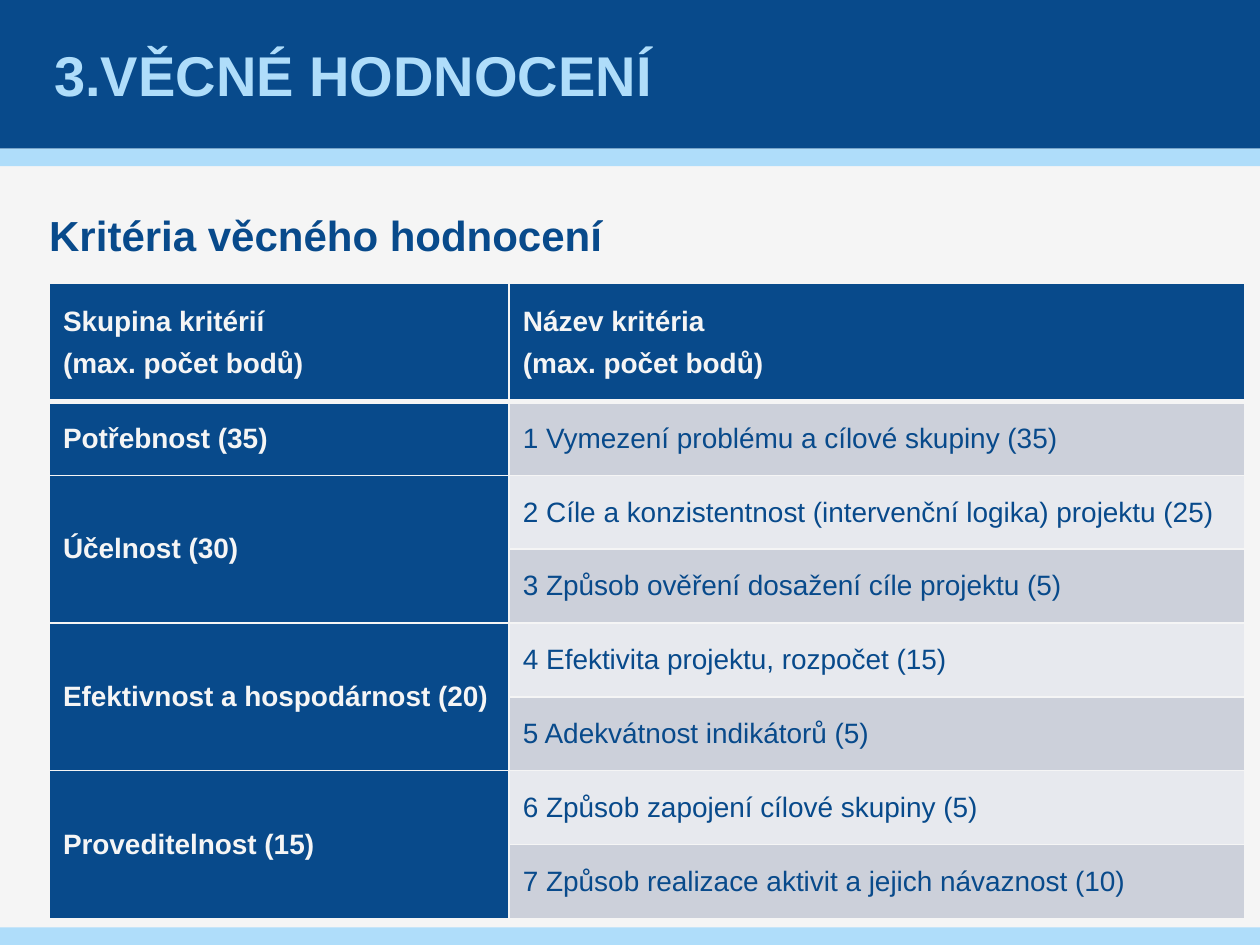
"""Build the slide with the criteria of the factual evaluation."""
from typing import NamedTuple

from lxml.etree import SubElement
from pptx import Presentation
from pptx.dml.color import RGBColor
from pptx.enum.shapes import MSO_SHAPE as Shape
from pptx.enum.text import MSO_ANCHOR as Anchor, MSO_AUTO_SIZE as AutoSize, PP_ALIGN as Align
from pptx.oxml.ns import qn
from pptx.util import Inches, Pt

NAVY = RGBColor(0x08, 0x4A, 0x8B)
SKY = RGBColor(0xAF, 0xDD, 0xFA)
PAPER = RGBColor(0xF5, 0xF5, 0xF5)
DARK_ROW = RGBColor(0xCC, 0xD0, 0xDA)
LIGHT_ROW = RGBColor(0xE7, 0xE9, 0xEE)
FONT = "Arial"
WIDTH, HEIGHT = Inches(10), Inches(7.5)
HEADER_ROW = 12.5


class Area(NamedTuple):
    """A rectangle in percent of the slide's width and height."""
    left: float
    top: float
    width: float
    height: float

    def lengths(self) -> tuple[int, int, int, int]:
        """Return left, top, width and height in slide units."""
        return across(self.left), down(self.top), across(self.width), down(self.height)


class Band(NamedTuple):
    """A coloured strip over the slide's full width."""
    area: Area
    color: RGBColor


class Group(NamedTuple):
    """A group of criteria, one table row for each criterion."""
    name: str
    criteria: list[str]


class Style(NamedTuple):
    """The look of a run of text."""
    size: float
    color: RGBColor
    bold: bool


BANDS = [
    Band(Area(0, 15.73, 100, 1.87), SKY),
    Band(Area(0, 0, 100, 15.73), NAVY),
    Band(Area(0, 98.13, 100, 1.87), SKY),
]
TITLE_AREA = Area(3.9, 0, 92.1, 15.73)
BODY_AREA = Area(3.9, 22.13, 90.2, 67.2)
TABLE_AREA = Area(3.9, 30, 94.9, 67.2)
COLUMNS = [36.5, 58.4]

HEADINGS = ["Skupina kritérií", "Název kritéria"]
HEADING_NOTE = "(max. počet bodů)"
GROUPS = [
    Group("Potřebnost (35)", ["1 Vymezení problému a cílové skupiny (35)"]),
    Group("Účelnost (30)", [
        "2 Cíle a konzistentnost (intervenční logika) projektu (25)",
        "3 Způsob ověření dosažení cíle projektu (5)",
    ]),
    Group("Efektivnost a hospodárnost (20)", [
        "4 Efektivita projektu, rozpočet (15)",
        "5 Adekvátnost indikátorů (5)",
    ]),
    Group("Proveditelnost (15)", [
        "6 Způsob zapojení cílové skupiny (5)",
        "7 Způsob realizace aktivit a jejich návaznost (10)",
    ]),
]
TITLE_STYLE = Style(32, SKY, True)
BODY_STYLE = Style(24, NAVY, True)
HEAD_STYLE = Style(16, PAPER, True)
CELL_STYLE = Style(16, NAVY, False)


def across(percent: float) -> int:
    """Turn a share of the slide's width into a length."""
    return round(WIDTH * percent / 100)


def down(percent: float) -> int:
    """Turn a share of the slide's height into a length."""
    return round(HEIGHT * percent / 100)


def add_run(para, text: str, style: Style) -> None:
    """Add one formatted run to a paragraph."""
    font_run = para.add_run()
    font_run.text = text
    font = font_run.font
    font.name, font.size, font.bold = FONT, Pt(style.size), style.bold
    font.color.rgb = style.color


def draw_band(slide, band: Band) -> None:
    """Draw a strip behind everything else."""
    strip = slide.shapes.add_shape(Shape.RECTANGLE, *band.area.lengths())
    strip.shadow.inherit = False
    strip.fill.solid()
    strip.fill.fore_color.rgb = band.color
    strip.line.fill.background()
    slide.shapes._spTree.insert(2, strip._element)


def fill_placeholder(box, area: Area, text: str, style: Style, anchor: Anchor, inset: float):
    """Place a placeholder, write its text and return the paragraph."""
    box.left, box.top, box.width, box.height = area.lengths()
    frame = box.text_frame
    frame.auto_size, frame.word_wrap = AutoSize.NONE, True
    frame.vertical_anchor = anchor
    frame.margin_left = frame.margin_right = Inches(inset)
    frame.margin_top = frame.margin_bottom = 0
    para = frame.paragraphs[0]
    para.alignment = Align.LEFT
    add_run(para, text, style)
    return para


def draw_borders(cell, top: float, bottom: float) -> None:
    """Rule the four sides of a cell, with widths in points."""
    properties = cell._tc.get_or_add_tcPr()
    for side, width in zip("LRTB", (1, 1, top, bottom)):
        line = SubElement(properties, qn(f"a:ln{side}"), w=str(Pt(width)))
        fill = SubElement(line, qn("a:solidFill"))
        SubElement(fill, qn("a:srgbClr"), val=str(PAPER))


def format_cell(cell, row: int, lines: list[str], style: Style, fill: RGBColor) -> None:
    """Rule, fill and write one table cell."""
    draw_borders(cell, 3 if row == 1 else 1, 3 if row == 0 else 1)
    cell.fill.solid()
    cell.fill.fore_color.rgb = fill
    cell.vertical_anchor = Anchor.MIDDLE
    cell.margin_left = cell.margin_right = Inches(0.07)
    cell.margin_top = cell.margin_bottom = 0
    frame = cell.text_frame
    for index, text in enumerate(lines):
        para = frame.add_paragraph() if index else frame.paragraphs[0]
        para.space_before = para.space_after = Pt(3)
        para._p.get_or_add_pPr().set("marL", str(Inches(0.04)))
        add_run(para, text, style)


def draw_table(slide) -> None:
    """Draw the table of criteria with one merged cell for each group."""
    count = sum(len(group.criteria) for group in GROUPS)
    table = slide.shapes.add_table(count + 1, len(COLUMNS), *TABLE_AREA.lengths()).table
    for column, share in zip(table.columns, COLUMNS):
        column.width = across(share)
    for index, row in enumerate(table.rows):
        row.height = down((TABLE_AREA.height - HEADER_ROW) / count if index else HEADER_ROW)
    for column, heading in enumerate(HEADINGS):
        format_cell(table.cell(0, column), 0, [heading, HEADING_NOTE], HEAD_STYLE, NAVY)
    row = 1
    for group in GROUPS:
        first = row
        for criterion in group.criteria:
            names = [group.name] if row == first else []
            format_cell(table.cell(row, 0), row, names, HEAD_STYLE, NAVY)
            shade = DARK_ROW if row % 2 else LIGHT_ROW
            format_cell(table.cell(row, 1), row, [criterion], CELL_STYLE, shade)
            row += 1
        if row - first > 1:
            table.cell(first, 0).merge(table.cell(row - 1, 0))


def main() -> None:
    """Build and save the deck."""
    deck = Presentation()
    deck.slide_width, deck.slide_height = WIDTH, HEIGHT
    slide = deck.slides.add_slide(deck.slide_layouts[1])
    slide.background.fill.solid()
    slide.background.fill.fore_color.rgb = PAPER
    for band in BANDS:
        draw_band(slide, band)
    fill_placeholder(slide.shapes.title, TITLE_AREA, "3.VĚCNÉ HODNOCENÍ",
                     TITLE_STYLE, Anchor.MIDDLE, 0.04)
    para = fill_placeholder(slide.placeholders[1], BODY_AREA, "Kritéria věcného hodnocení",
                            BODY_STYLE, Anchor.TOP, 0)
    para.line_spacing = Pt(28.8)
    para.space_before = para.space_after = Pt(6)
    properties = para._p.get_or_add_pPr()
    properties.set("marL", "0")
    properties.set("indent", "0")
    SubElement(properties, qn("a:buNone"))
    draw_table(slide)
    deck.save("out.pptx")


if __name__ == "__main__":
    main()
